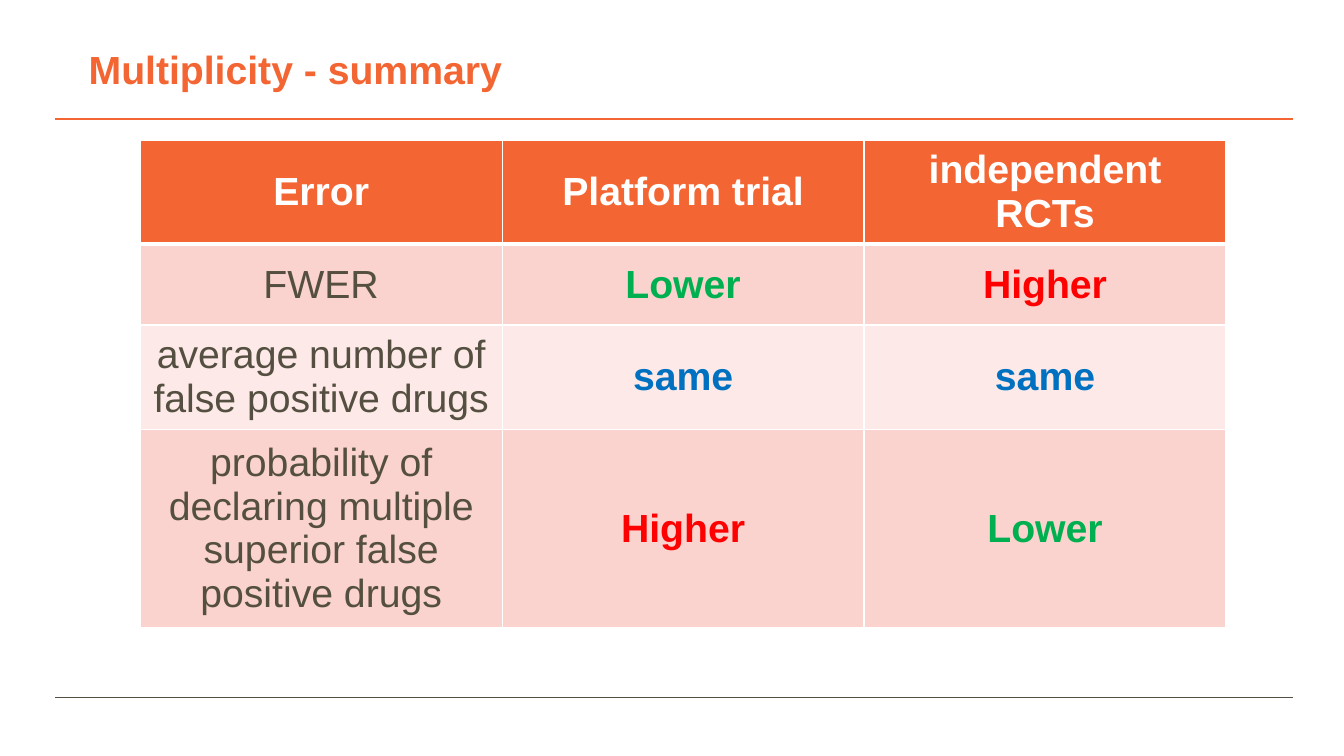
from dataclasses import dataclass

from lxml.etree import SubElement
from pptx import Presentation
from pptx.dml.color import RGBColor
from pptx.enum.shapes import MSO_CONNECTOR as Connector
from pptx.enum.text import MSO_ANCHOR as Anchor, PP_ALIGN as Align
from pptx.oxml.ns import qn
from pptx.slide import Slide
from pptx.table import _Cell as Cell
from pptx.text.text import _Paragraph as Paragraph
from pptx.util import Inches, Pt

WIDTH, HEIGHT = Inches(13.33), Inches(7.5)
ORANGE, DARK, WHITE = "F36633", "544F40", "FFFFFF"
GREEN, RED, BLUE = "00B050", "FF0000", "0070C0"
BANDS = ("FAD3CE", "FDEAE8")
TEXT_SIZE = 28


@dataclass(frozen=True)
class Rule:
    row: float
    color: str


@dataclass(frozen=True)
class Entry:
    text: str
    color: str
    bold: bool = True


@dataclass(frozen=True)
class TableRow:
    height: float
    fill: str
    entries: tuple[Entry, ...]


RULES = (Rule(92.27, DARK), Rule(15.73, ORANGE))
LOWER, HIGHER, SAME = Entry("Lower", GREEN), Entry("Higher", RED), Entry("same", BLUE)
HEADINGS = ("Error", "Platform trial", "independent RCTs")
TABLE_ROWS = (
    TableRow(8.67, ORANGE, tuple(Entry(heading, WHITE) for heading in HEADINGS)),
    TableRow(10.67, BANDS[0], (Entry("FWER", DARK, False), LOWER, HIGHER)),
    TableRow(12.4, BANDS[1], (
        Entry("average number of false positive drugs", DARK, False), SAME, SAME)),
    TableRow(23.73, BANDS[0], (
        Entry("probability of declaring multiple superior false positive drugs", DARK, False),
        HIGHER, LOWER)),
)


def columns(count: float) -> int:
    return round(WIDTH * count / 100)


def rows(count: float) -> int:
    return round(HEIGHT * count / 100)


def rgb(color: str) -> RGBColor:
    return RGBColor.from_string(color)


def write(para: Paragraph, entry: Entry) -> None:
    para.text = entry.text
    for span in para.runs:
        span.font.name = "Arial"
        span.font.size = Pt(TEXT_SIZE)
        span.font.bold = entry.bold
        span.font.color.rgb = rgb(entry.color)


def draw_rule(page: Slide, rule: Rule) -> None:
    line = page.shapes.add_connector(
        Connector.STRAIGHT, columns(4.13), rows(rule.row), columns(96.17), rows(rule.row))
    line.line.color.rgb = rgb(rule.color)
    line.line.width = Pt(1)
    SubElement(line._element.spPr, qn("a:effectLst"))


def draw_title(page: Slide, entry: Entry) -> None:
    box = page.shapes.add_textbox(columns(6.6), rows(6), columns(82.97), rows(6.27))
    frame = box.text_frame
    frame.word_wrap = True
    frame.vertical_anchor = Anchor.BOTTOM
    frame.margin_left = frame.margin_top = frame.margin_right = frame.margin_bottom = 0
    write(frame.paragraphs[0], entry)


def add_borders(cell: Cell, top: float, bottom: float) -> None:
    properties = cell._tc.get_or_add_tcPr()
    for side, width in (("L", 1), ("R", 1), ("T", top), ("B", bottom)):
        border = SubElement(properties, qn(f"a:ln{side}"), w=str(Pt(width)))
        fill = SubElement(border, qn("a:solidFill"))
        SubElement(fill, qn("a:srgbClr"), val=WHITE)


def draw_table(page: Slide, table_rows: tuple[TableRow, ...]) -> None:
    count = len(HEADINGS)
    column_width = 26.93
    total_height = sum(table_row.height for table_row in table_rows)
    table = page.shapes.add_table(
        len(table_rows), count, columns(10.43), rows(18.53),
        columns(column_width * count), rows(total_height)).table
    for column in table.columns:
        column.width = columns(column_width)
    for index, table_row in enumerate(table_rows):
        table.rows[index].height = rows(table_row.height)
        for position, entry in enumerate(table_row.entries):
            cell = table.cell(index, position)
            add_borders(cell, 3 if index == 1 else 1, 3 if index == 0 else 1)
            cell.fill.solid()
            cell.fill.fore_color.rgb = rgb(table_row.fill)
            cell.vertical_anchor = Anchor.MIDDLE
            para = cell.text_frame.paragraphs[0]
            para.alignment = Align.CENTER
            write(para, entry)


def main() -> None:
    deck = Presentation()
    deck.slide_width, deck.slide_height = WIDTH, HEIGHT
    page = deck.slides.add_slide(deck.slide_layouts[6])
    for rule in RULES:
        draw_rule(page, rule)
    draw_title(page, Entry("Multiplicity - summary", ORANGE))
    draw_table(page, TABLE_ROWS)
    deck.save("out.pptx")


if __name__ == "__main__":
    main()
